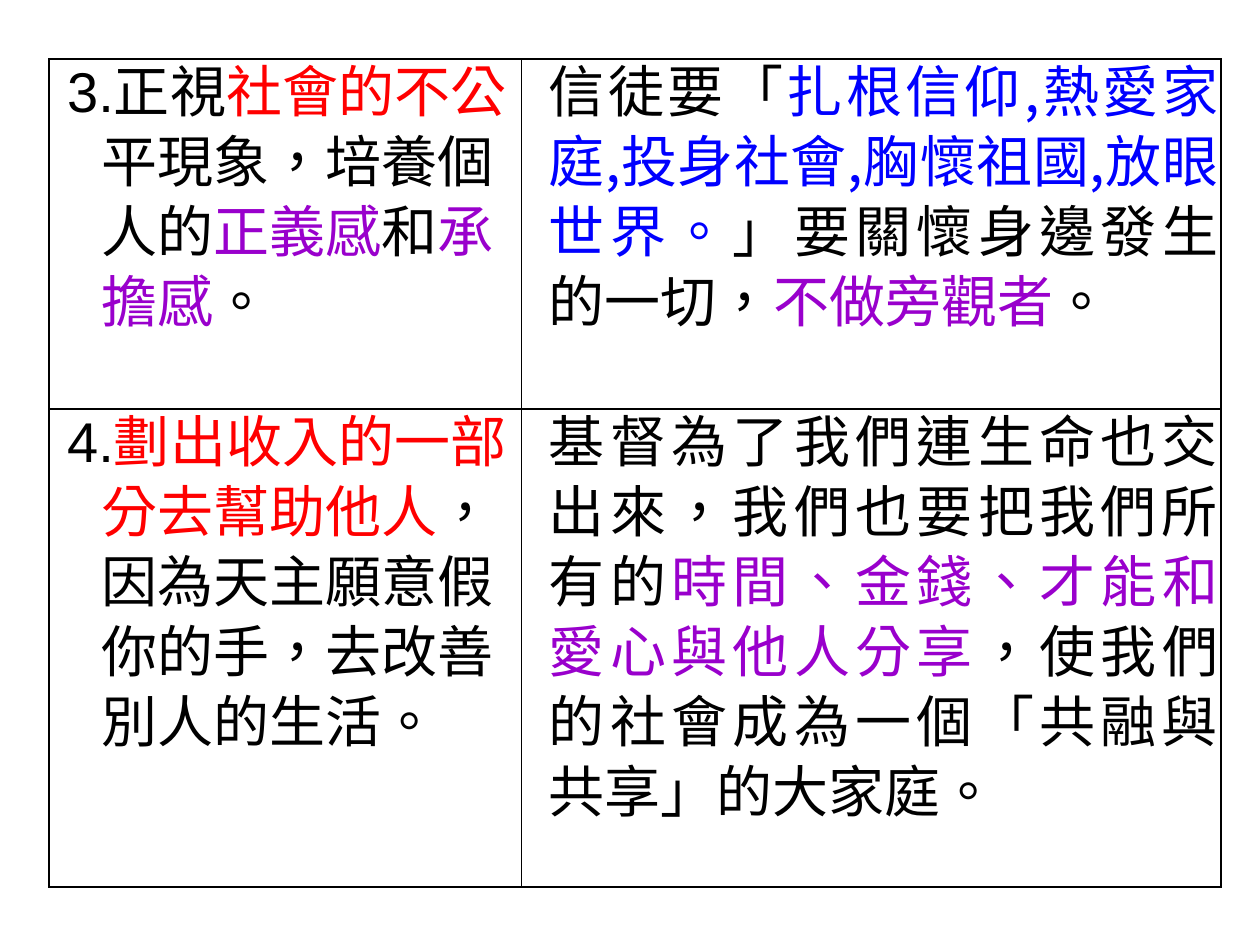
from lxml import etree
from pptx import Presentation
from pptx.dml.color import RGBColor
from pptx.enum.lang import MSO_LANGUAGE_ID
from pptx.enum.text import PP_ALIGN
from pptx.oxml.ns import qn
from pptx.util import Pt

JUSTIFY = PP_ALIGN.JUSTIFY
TAIWAN = MSO_LANGUAGE_ID.TAIWAN if hasattr(MSO_LANGUAGE_ID, "TAIWAN") else None
BLACK = RGBColor(0x00, 0x00, 0x00)
RED = RGBColor(0xFF, 0x00, 0x00)
BLUE = RGBColor(0x00, 0x00, 0xFF)
PURPLE = RGBColor(0x99, 0x00, 0xCC)
CJK_FONT = "Noto Sans CJK SC"
FONTS = ["Arial", CJK_FONT]  # one per column
COL_WIDTHS = [270, 399.6]
ROW_HEIGHTS = [200, 273]

# Rows of cells, cells of paragraphs, paragraphs of (text, colour) runs
ROWS = [
    [
        [
            [("3.正視", BLACK), ("社會的不公", RED)],
            [("平現象，培養個", BLACK)],
            [("人的", BLACK), ("正義感", PURPLE), ("和", BLACK), ("承", PURPLE)],
            [("擔感", PURPLE), ("。", BLACK)],
        ],
        [
            [("信徒要「", BLACK),
             ("扎根信仰,熱愛家庭,投身社會,胸懷祖國,放眼世界。", BLUE),
             ("」要關懷身邊發生的一切，", BLACK),
             ("不做旁觀者", PURPLE), ("。", BLACK)],
        ],
    ],
    [
        [
            [("4.", BLACK), ("劃出收入的一部", RED)],
            [("分去幫助他人", RED), ("，", BLACK)],
            [("因為天主願意假", BLACK)],
            [("你的手，去改善", BLACK)],
            [("別人的生活。", BLACK)],
        ],
        [
            [("基督為了我們連生命也交出來，我們也要把我們所有的", BLACK),
             ("時間、金錢、才能和愛心與他人分享", PURPLE),
             ("，使我們的社會成為一個「共融與共享」的大家庭。", BLACK)],
        ],
    ],
]


def set_borders(cell):
    tcPr = cell._tc.get_or_add_tcPr()
    for i, side in enumerate(("a:lnL", "a:lnR", "a:lnT", "a:lnB")):
        ln = etree.Element(qn(side), w=str(Pt(1)))
        fill = etree.SubElement(ln, qn("a:solidFill"))
        etree.SubElement(fill, qn("a:srgbClr"), val=str(BLACK))
        tcPr.insert(i, ln)


prs = Presentation()
prs.slide_width, prs.slide_height = Pt(720), Pt(540)
s = prs.slides.add_slide(prs.slide_layouts[6])

# Table frame
table = s.shapes.add_table(2, 2, Pt(28), Pt(33.8), Pt(sum(COL_WIDTHS)),
                           Pt(sum(ROW_HEIGHTS))).table
table.first_row = table.horz_banding = False
for column, width in zip(table.columns, COL_WIDTHS):
    column.width = Pt(width)
for row, height in zip(table.rows, ROW_HEIGHTS):
    row.height = Pt(height)

# Cell texts
for i, cells in enumerate(ROWS):
    for j, paragraphs in enumerate(cells):
        cell = table.cell(i, j)
        cell.fill.background()
        set_borders(cell)
        cell.margin_left = cell.margin_right = Pt(1.4)
        cell.margin_top = cell.margin_bottom = 0
        tf = cell.text_frame
        for k, runs in enumerate(paragraphs):
            p = tf.add_paragraph() if k else tf.paragraphs[0]
            p.alignment = JUSTIFY
            p.line_spacing = Pt(40)
            # Numbered line starts left of the lines that follow it
            indent = 14.2 if j else 28.6 if k else 9
            pPr = p._p.get_or_add_pPr()
            pPr.set("marL", str(Pt(indent)))
            pPr.set("hangingPunct", "0")
            for text, color in runs:
                r = p.add_run()
                r.text = text
                r.font.size = Pt(32)
                r.font.name = FONTS[j]
                r.font.color.rgb = color
                rPr = r._r.get_or_add_rPr()
                rPr.set("lang", "zh-TW")  # centres the punctuation marks
                etree.SubElement(rPr, qn("a:ea"), typeface=CJK_FONT)

prs.save("out.pptx")
